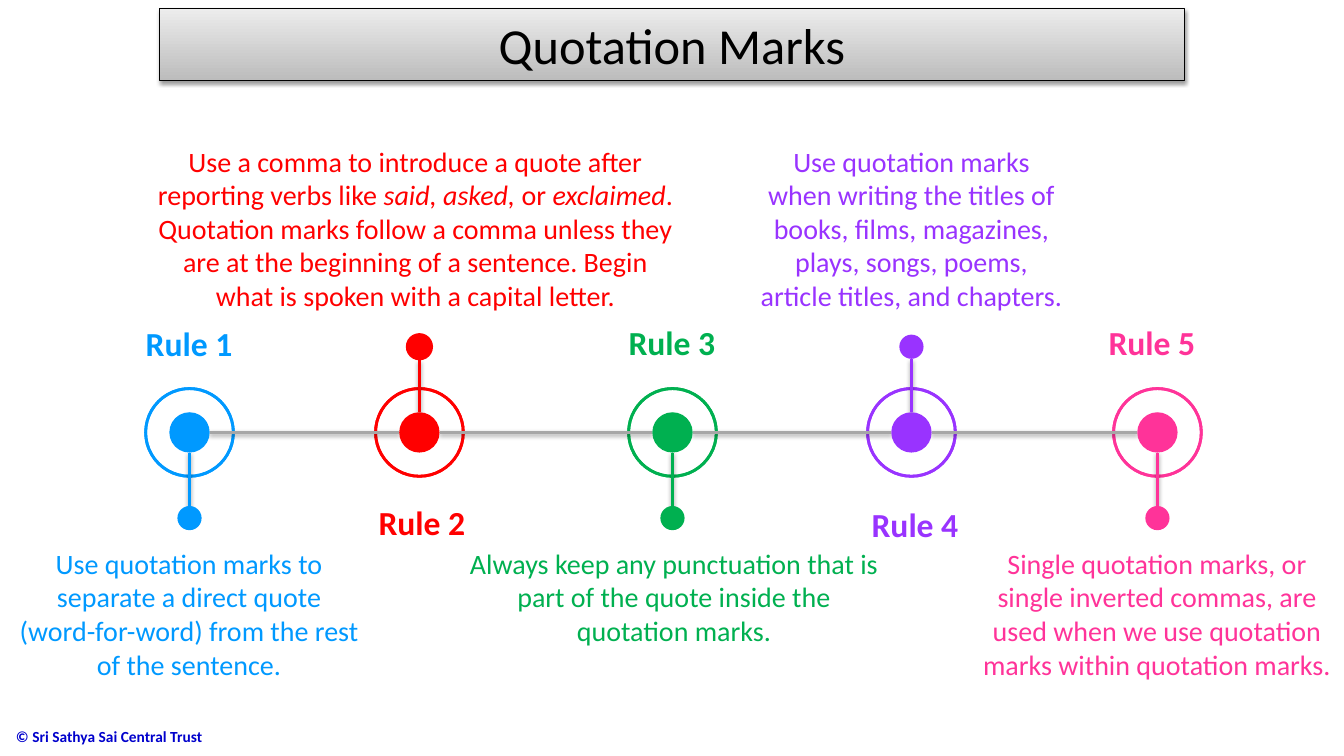
from dataclasses import dataclass
from itertools import pairwise

from lxml.etree import SubElement
from pptx import Presentation
from pptx.dml.color import RGBColor
from pptx.enum.shapes import MSO_CONNECTOR, MSO_SHAPE
from pptx.enum.text import MSO_ANCHOR, PP_ALIGN
from pptx.oxml.ns import qn
from pptx.util import Inches, Pt


@dataclass(frozen=True)
class Theme:
    font: str = "Calibri"
    title_size: int = 36
    label_size: int = 24
    body_size: int = 20
    footer_size: int = 11
    line_width: int = 2
    ink: str = "000000"
    axis: str = "A6A6A6"
    footer: str = "0000CC"
    banner_top: str = "EDEDED"
    banner_bottom: str = "BCBCBC"
    blue: str = "0099FF"
    red: str = "FF0000"
    green: str = "00B050"
    purple: str = "9933FF"
    pink: str = "FF3399"


@dataclass(frozen=True)
class Rule:
    color: str
    center: float
    label_at: tuple
    body_at: tuple
    body: str
    above: bool = False
    bead: float = 0.24


THEME = Theme()
AXIS_Y = 4.29
RING, DOT = 0.87, 0.4
BEAD_ABOVE, BEAD_BELOW = 3.44, 5.14

RULES = [
    Rule(THEME.blue, 1.88, (1.34, 3.15), (0.07, 5.37, 3.61, 1.45),
         "Use quotation marks to separate a direct quote (word-for-word) "
         "from the rest of the sentence."),
    Rule(THEME.red, 4.16, (3.65, 4.93), (1.41, 1.38, 5.42, 1.78),
         "Use a comma to introduce a quote after reporting verbs like "
         "*said, asked,* or *exclaimed*. Quotation marks follow a comma unless "
         "they are at the beginning of a sentence. Begin what is spoken with "
         "a capital letter.", above=True, bead=0.27),
    Rule(THEME.green, 6.67, (6.13, 3.14), (4.48, 5.37, 4.41, 1.11),
         "Always keep any punctuation that is part of the quote inside the "
         "quotation marks."),
    Rule(THEME.purple, 9.04, (8.54, 4.95), (7.43, 1.38, 3.22, 1.78),
         "Use quotation marks when writing the titles of books, films, "
         "magazines, plays, songs, poems, article titles, and chapters.",
         above=True),
    Rule(THEME.pink, 11.48, (10.89, 3.14), (9.62, 5.37, 3.71, 1.45),
         "Single quotation marks, or single inverted commas, are used when we "
         "use quotation marks within quotation marks."),
]


def write(frame, text, *, size, color, bold=False, align=PP_ALIGN.CENTER,
          anchor=MSO_ANCHOR.TOP, wrap=True):
    frame.word_wrap = wrap
    frame.vertical_anchor = anchor
    paragraph = frame.paragraphs[0]
    paragraph.alignment = align
    for index, part in enumerate(text.split("*")):
        run = paragraph.add_run()
        run.text = part
        run.font.name = THEME.font
        run.font.size = Pt(size)
        run.font.bold = bold
        run.font.italic = index % 2 == 1
        run.font.color.rgb = RGBColor.from_string(color)


def cast_shadow(properties):
    effects = SubElement(properties, qn("a:effectLst"))
    shadow = SubElement(effects, qn("a:outerShdw"), blurRad="40000",
                        dist="20000", dir="5400000", rotWithShape="0")
    tint = SubElement(shadow, qn("a:srgbClr"), val=THEME.ink)
    SubElement(tint, qn("a:alpha"), val="38000")


class TimelineSlide:
    def __init__(self, presentation, theme):
        self.theme = theme
        self.slide = presentation.slides.add_slide(presentation.slide_layouts[5])
        self.shapes = self.slide.shapes

    def title(self, text, left, top, width, height):
        banner = self.shapes.title
        banner.left, banner.top = Inches(left), Inches(top)
        banner.width, banner.height = Inches(width), Inches(height)
        banner.fill.gradient()
        banner.fill.gradient_angle = 270
        shades = (self.theme.banner_top, self.theme.banner_bottom)
        for stop, shade in zip(banner.fill.gradient_stops, shades):
            stop.color.rgb = RGBColor.from_string(shade)
        banner.line.color.rgb = RGBColor.from_string(self.theme.ink)
        banner.line.width = Pt(0.75)
        cast_shadow(banner.element.spPr)
        write(banner.text_frame, text, size=self.theme.title_size,
              color=self.theme.ink, anchor=MSO_ANCHOR.MIDDLE)

    def text(self, text, left, top, width, height, **style):
        box = self.shapes.add_textbox(Inches(left), Inches(top),
                                      Inches(width), Inches(height))
        write(box.text_frame, text, **style)

    def round_shape(self, kind, x, y, size):
        shape = self.shapes.add_shape(kind, Inches(x - size / 2), Inches(y - size / 2),
                                      Inches(size), Inches(size))
        shape.shadow.inherit = False
        return shape

    def ring(self, x, y, color):
        ring = self.round_shape(MSO_SHAPE.DONUT, x, y, RING)
        ring.adjustments[0] = 0
        ring.fill.background()
        ring.line.color.rgb = RGBColor.from_string(color)
        ring.line.width = Pt(self.theme.line_width)

    def dot(self, x, y, size, color):
        dot = self.round_shape(MSO_SHAPE.OVAL, x, y, size)
        dot.fill.solid()
        dot.fill.fore_color.rgb = RGBColor.from_string(color)
        dot.line.fill.background()

    def line(self, x1, y1, x2, y2, color):
        line = self.shapes.add_connector(MSO_CONNECTOR.STRAIGHT, Inches(x1),
                                         Inches(y1), Inches(x2), Inches(y2))
        line.line.color.rgb = RGBColor.from_string(color)
        line.line.width = Pt(self.theme.line_width)
        cast_shadow(line.element.spPr)

    def rule(self, number, rule):
        direction = -1 if rule.above else 1
        bead_y = BEAD_ABOVE if rule.above else BEAD_BELOW
        self.line(rule.center, AXIS_Y + direction * DOT / 2,
                  rule.center, bead_y - direction * rule.bead / 2, rule.color)
        self.dot(rule.center, AXIS_Y, DOT, rule.color)
        self.dot(rule.center, bead_y, rule.bead, rule.color)
        self.text(f"Rule {number}", *rule.label_at, 1.07, 0.5, color=rule.color,
                  size=self.theme.label_size, bold=True, wrap=False)
        self.text(rule.body, *rule.body_at, color=rule.color,
                  size=self.theme.body_size)


def main():
    presentation = Presentation()
    presentation.slide_width, presentation.slide_height = Inches(13.33), Inches(7.5)
    timeline = TimelineSlide(presentation, THEME)
    timeline.title("Quotation Marks", 1.58, 0.08, 10.17, 0.72)
    timeline.text("© Sri Sathya Sai Central Trust", 0.06, 7.1, 3.53, 0.41,
                  size=THEME.footer_size, color=THEME.footer, bold=True,
                  align=PP_ALIGN.LEFT, anchor=MSO_ANCHOR.MIDDLE)
    for rule in RULES:
        timeline.ring(rule.center, AXIS_Y, rule.color)
    for start, end in pairwise(RULES):
        timeline.line(start.center + DOT / 2, AXIS_Y,
                      end.center - DOT / 2, AXIS_Y, THEME.axis)
    for number, rule in enumerate(RULES, start=1):
        timeline.rule(number, rule)
    presentation.save("out.pptx")


if __name__ == "__main__":
    main()
